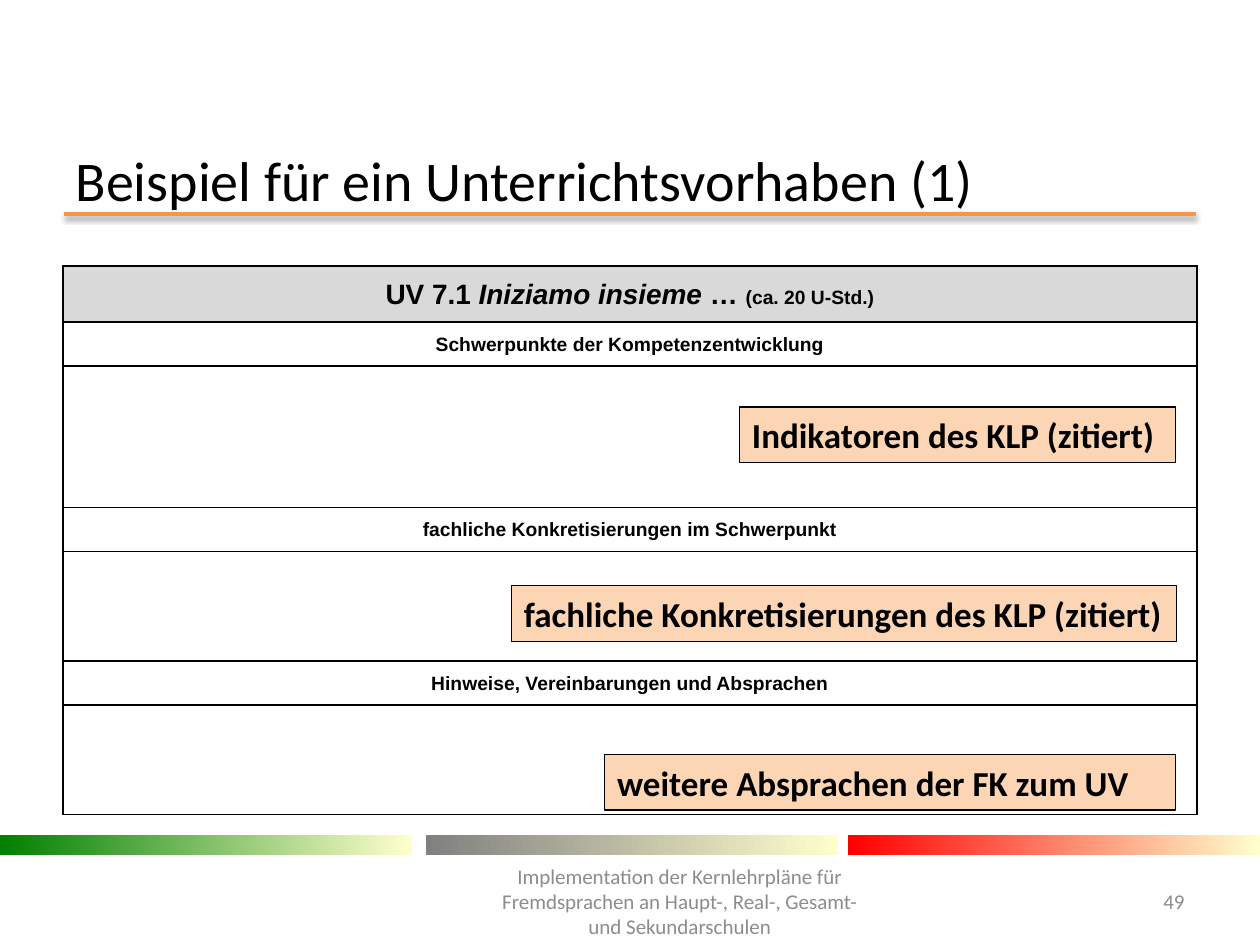
from lxml import etree
from pptx import Presentation
from pptx.dml.color import RGBColor
from pptx.enum.shapes import MSO_CONNECTOR, MSO_SHAPE
from pptx.enum.text import MSO_ANCHOR, PP_ALIGN
from pptx.oxml import parse_xml
from pptx.oxml.ns import nsdecls, qn
from pptx.util import Inches, Pt

RECT = MSO_SHAPE.RECTANGLE
LINE = MSO_CONNECTOR.STRAIGHT
MID = MSO_ANCHOR.MIDDLE
LEFT, MIDST, RIGHT = PP_ALIGN.LEFT, PP_ALIGN.CENTER, PP_ALIGN.RIGHT


def color(code):
    return RGBColor.from_string(code)


def put(par, text, size, name="Calibri", tint="000000", **more):
    run = par.add_run()
    run.text = text
    form = {"size": Pt(size), "name": name, **more}
    for key, val in form.items():
        setattr(run.font, key, val)
    run.font.color.rgb = color(tint)


deck = Presentation()
deck.slide_width, deck.slide_height = Inches(10), Inches(7.5)
slide = deck.slides.add_slide(deck.slide_layouts[5])
shapes = slide.shapes

rule = shapes.add_connector(LINE, Inches(0.51), Inches(1.7), Inches(9.49), Inches(1.7))
rule.line.color.rgb = color("F79646")
rule.line.width = Pt(2)
rule._element.spPr.append(parse_xml(
    f'<a:effectLst {nsdecls("a")}><a:outerShdw blurRad="39370" dist="20320" '
    'dir="5400000" rotWithShape="0"><a:srgbClr val="000000">'
    '<a:alpha val="38000"/></a:srgbClr></a:outerShdw></a:effectLst>'))

for left, tint in [(0, "008000"), (3.38, "808080"), (6.73, "FF0000")]:
    bar = shapes.add_shape(RECT, Inches(left), Inches(6.63), Inches(3.27), Inches(0.16))
    bar.shadow.inherit = False
    bar.line.fill.background()
    bar.fill.gradient()
    bar.fill.gradient_angle = 0
    for stop, code in zip(bar.fill.gradient_stops, (tint, "FFFFCC")):
        stop.color.rgb = color(code)

title = shapes.title
place = {"left": 0.5, "top": 1.23, "width": 9, "height": 0.39}
for key, val in place.items():
    setattr(title, key, Inches(val))
title.text_frame.vertical_anchor = MID
head = title.text_frame.paragraphs[0]
head.alignment = LEFT
put(head, "Beispiel für ein Unterrichtsvorhaben (1)", 32)

foot = "Implementation der Kernlehrpläne für Fremdsprachen an Haupt-, Real-, Gesamt- und Sekundarschulen"
for left, width, side, text in [(8.86, 0.64, RIGHT, "49"), (3.82, 3.15, MIDST, foot)]:
    box = shapes.add_textbox(Inches(left), Inches(6.95), Inches(width), Inches(0.4))
    frame = box.text_frame
    frame.word_wrap = True
    frame.vertical_anchor = MID
    frame.paragraphs[0].alignment = side
    put(frame.paragraphs[0], text, 12, tint="8C8C8C")

rows = [
    (0.44, [("UV 7.1 ", 16, False), ("Iniziamo insieme ", 16, True),
            ("… ", 16, False), ("(ca. 20 U-Std.)", 11, False)]),
    (0.34, [("Schwerpunkte der Kompetenzentwicklung", 11, False)]),
    (1.12, []),
    (0.34, [("fachliche Konkretisierungen im Schwerpunkt", 11, False)]),
    (0.87, []),
    (0.34, [("Hinweise, Vereinbarungen und Absprachen", 11, False)]),
    (0.87, []),
]
tall = sum(high for high, runs in rows)
table = shapes.add_table(len(rows), 1, Inches(0.5), Inches(2.11), Inches(9), Inches(tall)).table
table.first_row = table.horz_banding = False
for num, (high, runs) in enumerate(rows):
    table.rows[num].height = Inches(high)
    cell = table.cell(num, 0)
    for side in ("left", "right", "top", "bottom"):
        setattr(cell, f"margin_{side}", Inches(0.07))
    props = cell._tc.get_or_add_tcPr()
    for tag in ("lnL", "lnR", "lnT", "lnB"):
        edge = etree.SubElement(props, qn(f"a:{tag}"), w=str(Pt(1)))
        fill = etree.SubElement(edge, qn("a:solidFill"))
        etree.SubElement(fill, qn("a:srgbClr"), val="000000")
    cell.fill.solid()
    cell.fill.fore_color.rgb = color("FFFFFF" if num else "D9D9D9")
    par = cell.text_frame.paragraphs[0]
    par.alignment = MIDST
    par.line_spacing = 1.15
    for text, size, slant in runs:
        put(par, text, size, "Arial", bold=True, italic=slant)

notes = [
    (5.87, 3.23, 3.46, "Indikatoren des KLP (zitiert)"),
    (4.06, 4.65, 5.28, "fachliche Konkretisierungen des KLP (zitiert)"),
    (4.8, 5.99, 4.53, "weitere Absprachen der FK zum UV"),
]
for left, top, width, text in notes:
    note = shapes.add_shape(RECT, Inches(left), Inches(top), Inches(width), Inches(0.44))
    note.shadow.inherit = False
    note.fill.solid()
    note.fill.fore_color.rgb = color("FCD5B5")
    note.line.color.rgb = color("000000")
    note.line.width = Pt(0.75)
    par = note.text_frame.paragraphs[0]
    par.alignment = LEFT
    put(par, text, 20, bold=True)

deck.save("out.pptx")
